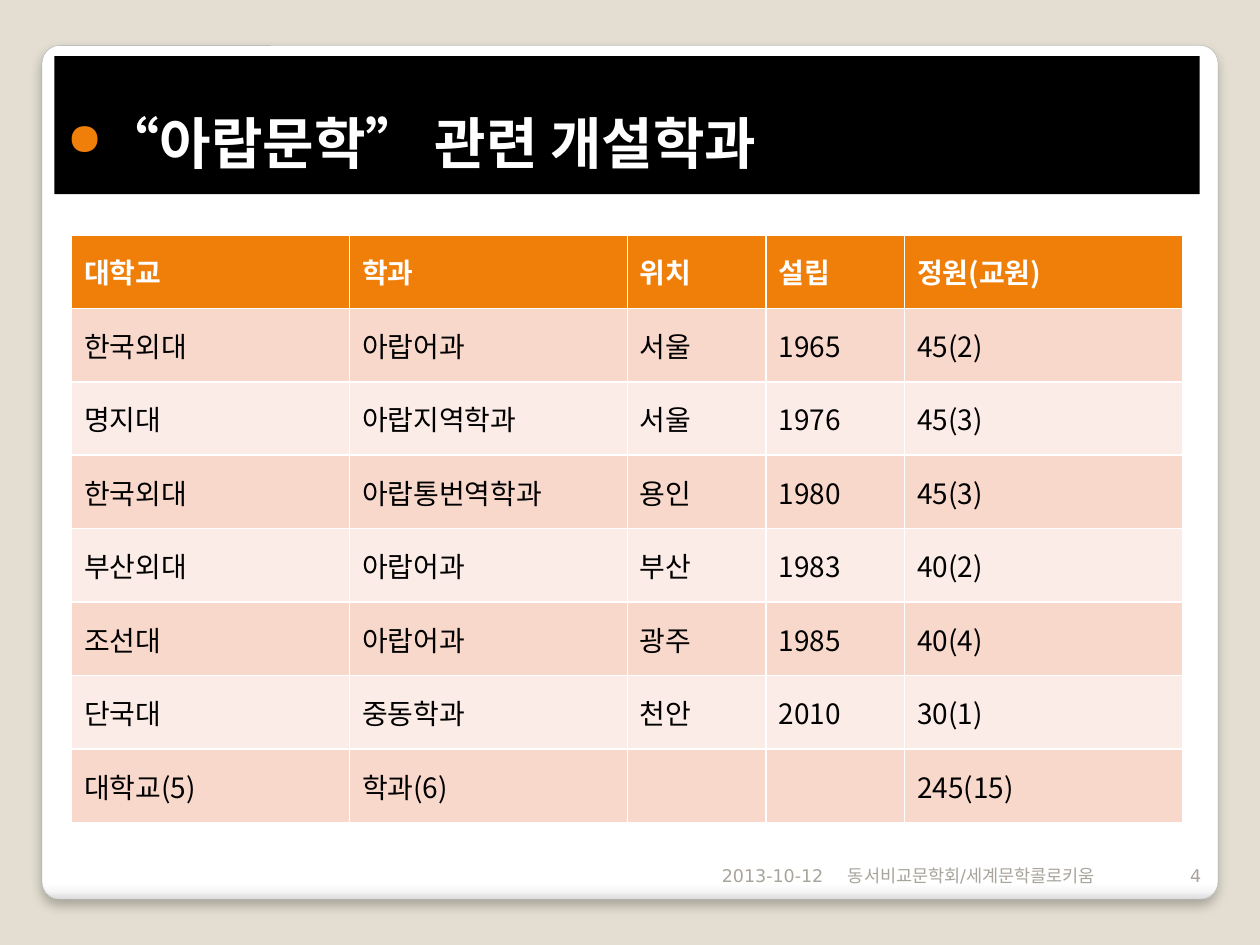
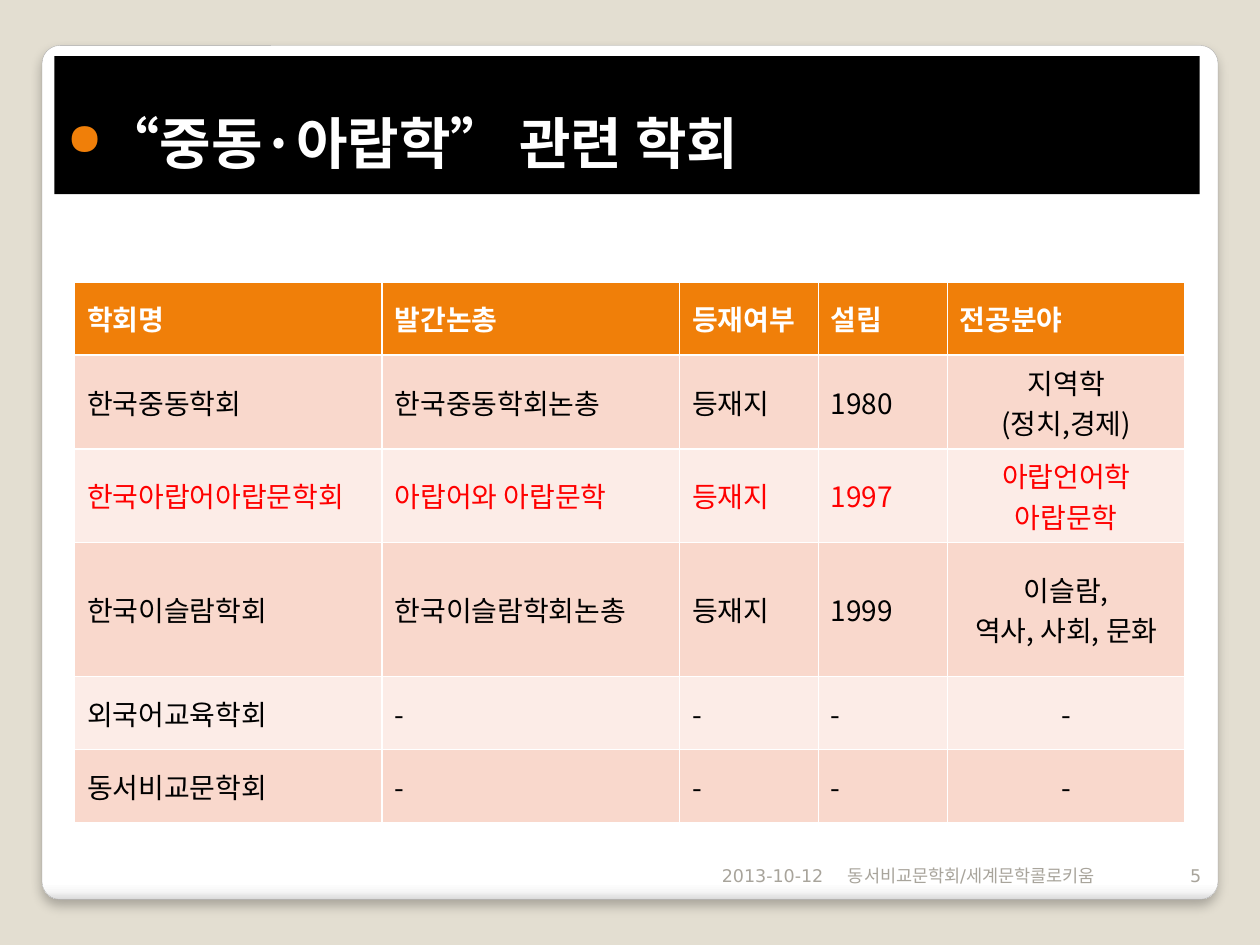
from dataclasses import dataclass

from lxml import etree
from pptx import Presentation
from pptx.dml.color import RGBColor
from pptx.enum.shapes import MSO_SHAPE
from pptx.enum.text import MSO_ANCHOR, MSO_AUTO_SIZE, PP_ALIGN
from pptx.oxml.ns import qn
from pptx.util import Pt

ROUNDED = MSO_SHAPE.ROUNDED_RECTANGLE
MIDDLE, BOTTOM = MSO_ANCHOR.MIDDLE, MSO_ANCHOR.BOTTOM
LEFT, CENTER, RIGHT = PP_ALIGN.LEFT, PP_ALIGN.CENTER, PP_ALIGN.RIGHT
NO_AUTOFIT = MSO_AUTO_SIZE.NONE
TITLE_ONLY = 5


@dataclass(frozen=True)
class Theme:
    backdrop: str = "E3DED1"
    card_edge: str = "A4A4A4"
    card_stops: tuple = ((0, "FFFFFF"), (98, "FFFFFF"), (99, "F7F7F7"), (100, "DADADA"))
    band: str = "000000"
    accent: str = "F07F09"
    row_fills: tuple = ("F9D8CC", "FCECE7")
    light: str = "FFFFFF"
    ink: str = "000000"
    highlight: str = "FF0000"
    muted: str = "A8A49B"
    korean: str = "Noto Sans CJK KR"
    latin: str = "DejaVu Sans"
    title_size: float = 32
    table_size: float = 16
    footer_size: float = 10


THEME = Theme()

# Boxes in points: left, top, width, height
CARD = (24, 26, 672, 488)
BAND = (31, 32, 654.5, 79)
FOOTER = (297.5, 481, 396, 28.8)
ROW = 42          # height of a one-line table row
TWO_LINES = 53.5
THREE_LINES = 76.5

DATE = "2013-10-12"
EVENT = "동서비교문학회/세계문학콜로키움"

DEPARTMENTS = [
    ("대학교", "학과", "위치", "설립", "정원(교원)"),
    ("한국외대", "아랍어과", "서울", "1965", "45(2)"),
    ("명지대", "아랍지역학과", "서울", "1976", "45(3)"),
    ("한국외대", "아랍통번역학과", "용인", "1980", "45(3)"),
    ("부산외대", "아랍어과", "부산", "1983", "40(2)"),
    ("조선대", "아랍어과", "광주", "1985", "40(4)"),
    ("단국대", "중동학과", "천안", "2010", "30(1)"),
    ("대학교(5)", "학과(6)", "", "", "245(15)"),
]

SOCIETIES = [
    ("학회명", "발간논총", "등재여부", "설립", "전공분야"),
    ("한국중동학회", "한국중동학회논총", "등재지", "1980", "지역학\n(정치,경제)"),
    ("한국아랍어아랍문학회", "아랍어와 아랍문학", "등재지", "1997", "아랍언어학\n아랍문학"),
    ("한국이슬람학회", "한국이슬람학회논총", "등재지", "1999", "이슬람,\n역사, 사회, 문화"),
    ("외국어교육학회", "-", "-", "-", "-"),
    ("동서비교문학회", "-", "-", "-", "-"),
]


def add_xml(parent, tag, **attributes):
    return etree.SubElement(parent, qn(tag), {k: str(v) for k, v in attributes.items()})


def paint(fill, color):
    fill.solid()
    fill.fore_color.rgb = RGBColor.from_string(color)


def style_text(frame, size, color, latin=THEME.korean, bold=False, align=LEFT):
    for paragraph in frame.paragraphs:
        paragraph.alignment = align
        for run in paragraph.runs:
            run.font.size = Pt(size)
            run.font.bold = bold
            run.font.name = latin
            run.font.color.rgb = RGBColor.from_string(color)
            add_xml(run.font._element, "a:ea", typeface=THEME.korean)


def add_card(slide, box):
    """White rounded panel with a soft shadow, behind everything else."""
    card = slide.shapes.add_shape(ROUNDED, *map(Pt, box))
    card.adjustments[0] = 0.021
    card.line.color.rgb = RGBColor.from_string(THEME.card_edge)
    card.line.width = Pt(0.16)
    # Shading along the bottom edge
    card.fill.gradient()
    card.fill.gradient_angle = 270
    stops = card.element.spPr.find(".//" + qn("a:gsLst"))
    stops.clear()
    for position, color in THEME.card_stops:
        stop = add_xml(stops, "a:gs", pos=position * 1000)
        add_xml(stop, "a:srgbClr", val=color)
    # Shadow
    card.shadow.inherit = False
    effects = card.element.spPr.find(qn("a:effectLst"))
    shadow = add_xml(effects, "a:outerShdw", blurRad=Pt(6), dist=Pt(4),
                     dir=90 * 60000, algn="t", rotWithShape=0)
    shadow_color = add_xml(shadow, "a:srgbClr", val="000000")
    add_xml(shadow_color, "a:alpha", val=25000)
    slide.shapes.title.element.addprevious(card.element)


def add_title_band(slide, box, heading):
    """Black band with a bulleted heading."""
    band = slide.shapes.title
    band.left, band.top, band.width, band.height = map(Pt, box)
    paint(band.fill, THEME.band)
    frame = band.text_frame
    frame.text = heading
    frame.auto_size = NO_AUTOFIT
    frame.word_wrap = True
    frame.vertical_anchor = MIDDLE
    style_text(frame, THEME.title_size, THEME.light, bold=True)
    paragraph = frame.paragraphs[0]
    paragraph.line_spacing = 1.5
    paragraph.space_before = Pt(2.5)
    # Orange bullet with a hanging indent
    properties = paragraph._p.get_or_add_pPr()
    properties.set("marL", str(Pt(21)))
    properties.set("indent", str(Pt(-21)))
    bullet_color = add_xml(properties, "a:buClr")
    add_xml(bullet_color, "a:srgbClr", val=THEME.accent)
    add_xml(properties, "a:buSzPct", val=80000)
    add_xml(properties, "a:buFont", typeface="OpenSymbol")
    add_xml(properties, "a:buChar", char="●")


def add_footer(slide, box, number):
    """Date, event and slide number side by side."""
    left, top, width, height = box
    column = width / 11
    entries = ((DATE, 0, 5, RIGHT), (EVENT, 5, 5, LEFT), (str(number), 10, 1, RIGHT))
    for text, start, span, align in entries:
        entry = slide.shapes.add_textbox(Pt(left + start * column), Pt(top),
                                         Pt(span * column), Pt(height))
        frame = entry.text_frame
        frame.text = text
        frame.word_wrap = True
        frame.vertical_anchor = BOTTOM
        style_text(frame, THEME.footer_size, THEME.muted, THEME.latin, align=align)


def add_grid(slide, origin, rows, widths, heights, highlighted=None, centered=None):
    """Table with an orange header and alternating row fills."""
    left, top = origin
    grid = slide.shapes.add_table(len(rows), len(widths), Pt(left), Pt(top),
                                  Pt(sum(widths)), Pt(sum(heights))).table
    for column, width in zip(grid.columns, widths):
        column.width = Pt(width)
    for r, (entries, height) in enumerate(zip(rows, heights)):
        grid.rows[r].height = Pt(height)
        header = r == 0
        fill = THEME.accent if header else THEME.row_fills[(r - 1) % 2]
        color = THEME.light if header else THEME.highlight if r == highlighted else THEME.ink
        for c, entry in enumerate(entries):
            cell = grid.cell(r, c)
            paint(cell.fill, fill)
            cell.vertical_anchor = MIDDLE
            cell.text_frame.text = entry
            align = CENTER if c == centered and not header else LEFT
            style_text(cell.text_frame, THEME.table_size, color, bold=header, align=align)


def add_table_slide(deck, number, heading, **grid):
    slide = deck.slides.add_slide(deck.slide_layouts[TITLE_ONLY])
    add_card(slide, CARD)
    add_title_band(slide, BAND, heading)
    add_footer(slide, FOOTER, number)
    add_grid(slide, **grid)


def main():
    deck = Presentation()
    deck.slide_width, deck.slide_height = Pt(720), Pt(540)
    paint(deck.slide_master.background.fill, THEME.backdrop)

    add_table_slide(deck, 4, "“아랍문학” 관련 개설학과",
                    origin=(41, 134.2), rows=DEPARTMENTS,
                    widths=(158.75, 158.75, 79.25, 79.25, 158.75),
                    heights=[ROW] * len(DEPARTMENTS))
    add_table_slide(deck, 5, "“중동·아랍학” 관련 학회",
                    origin=(42.6, 161), rows=SOCIETIES,
                    widths=(175.75, 170, 79.25, 73.75, 136),
                    heights=(ROW, TWO_LINES, TWO_LINES, THREE_LINES, ROW, ROW),
                    highlighted=2, centered=4)
    deck.save("out.pptx")


if __name__ == "__main__":
    main()
